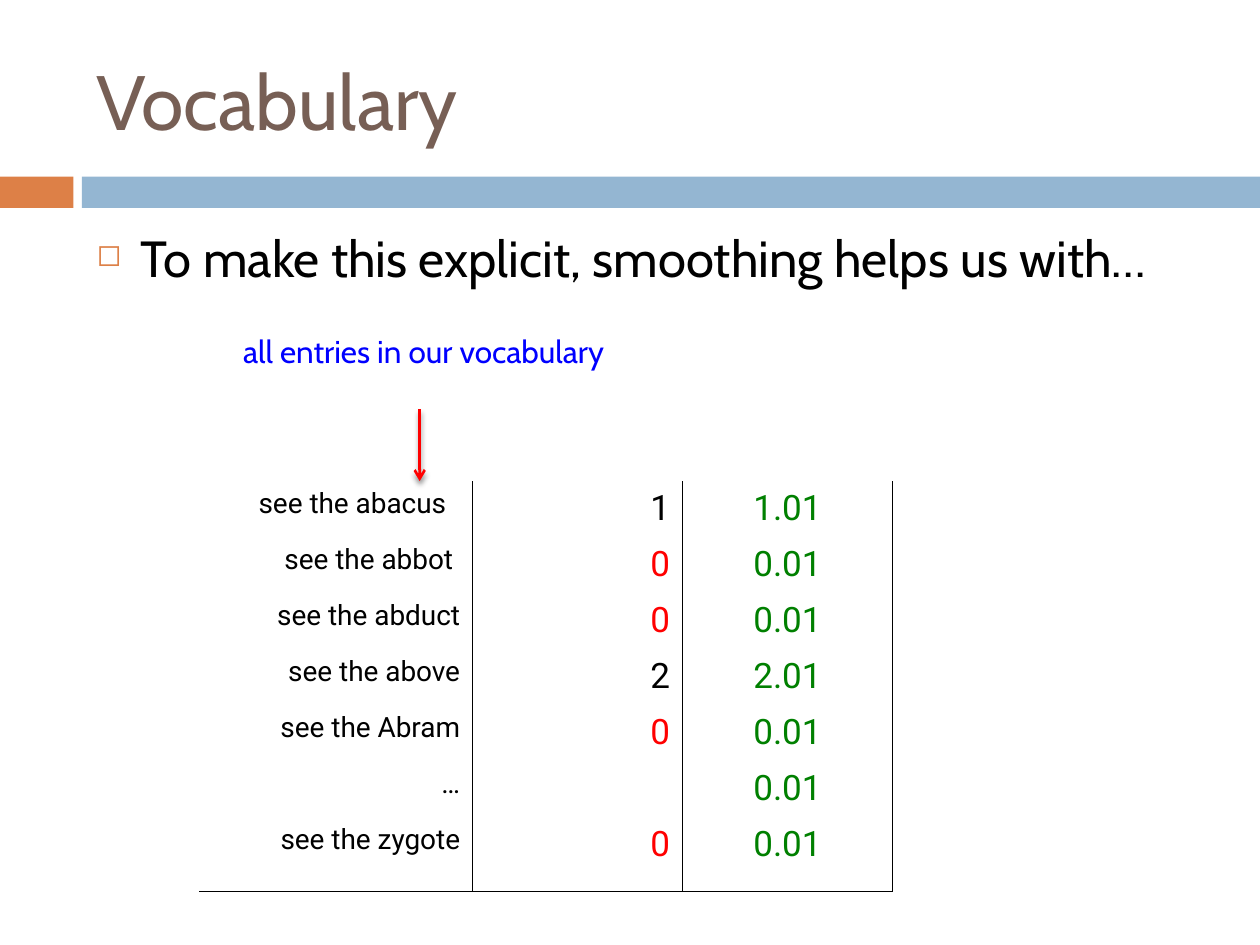
from lxml.etree import SubElement as Sub
from pptx import Presentation
from pptx.dml.color import RGBColor as Rgb
from pptx.enum.shapes import MSO_CONNECTOR as Conn, MSO_SHAPE as Kind
from pptx.enum.text import MSO_ANCHOR as Anchor, MSO_AUTO_SIZE as Auto, PP_ALIGN as Align
from pptx.oxml import parse_xml
from pptx.oxml.ns import nsdecls, qn
from pptx.util import Cm, Pt

HUES = {
    "brown": "775F55", "orange": "DD8047", "sky": "94B6D2", "black": "000000",
    "red": "FF0000", "green": "008000", "blue": "0000FF",
}
ROWS = [
    ("see the abacus  ", "1", "1.01"),
    ("see the abbot ", "0", "0.01"),
    ("see the abduct", "0", "0.01"),
    ("see the above", "2", "2.01"),
    ("see the Abram", "0", "0.01"),
    ("…", "", "0.01"),
    ("see the zygote", "0", "0.01"),
]


def rgb(hue):
    return Rgb.from_string(HUES[hue])


def write(para, text, hue, **form):
    run = para.add_run()
    run.text = text
    run.font.color.rgb = rgb(hue)
    for key, val in form.items():
        setattr(run.font, key, val)


def add_text(slide, box, text, hue, size, **form):
    frame = slide.shapes.add_textbox(*map(Cm, box)).text_frame
    frame.word_wrap = True
    for key, val in form.items():
        setattr(frame, key, val)
    para = frame.paragraphs[0]
    write(para, text, hue, size=Pt(size), name="Cabin")
    return para


def add_band(slide, box):
    left, top, width, height = box
    tab, gap = 1.48, 0.17
    start = tab + gap
    for x, w, hue in ((0, tab, "orange"), (start, width - start, "sky")):
        bar = slide.shapes.add_shape(Kind.RECTANGLE, Cm(left + x), Cm(top), Cm(w), Cm(height))
        bar.shadow.inherit = False
        bar.fill.solid()
        bar.fill.fore_color.rgb = rgb(hue)
        bar.line.fill.background()


def add_point(slide, box, text):
    para = add_text(slide, box, text, "black", 29)
    para.space_before = Pt(7)
    props = para._p.get_or_add_pPr()
    props.set("marL", str(Cm(0.89)))
    props.set("indent", str(Cm(-0.89)))
    tint = Sub(props, qn("a:buClr"))
    Sub(tint, qn("a:srgbClr"), val=HUES["orange"])
    Sub(props, qn("a:buSzPct"), val="60000")
    Sub(props, qn("a:buChar"), char="◻")


def add_note(slide, box, text):
    left, top, width, height = box
    add_text(slide, (left, top, width, 1.02), text, "blue", 18, auto_size=Auto.SHAPE_TO_FIT_TEXT)
    x = Cm(left + 3.81)
    arrow = slide.shapes.add_connector(Conn.STRAIGHT, x, Cm(top + 1.69), x, Cm(top + height))
    arrow.line.color.rgb = rgb("red")
    arrow.line.width = Pt(1.5)
    Sub(arrow.line._get_or_add_ln(), qn("a:tailEnd"), type="arrow")
    arrow._element.spPr.append(parse_xml(
        f'<a:effectLst {nsdecls("a")}><a:outerShdw blurRad="{Pt(3)}" dist="{Pt(2.4)}" '
        f'dir="5400000" rotWithShape="0"><a:srgbClr val="{HUES["black"]}">'
        '<a:alpha val="45000"/></a:srgbClr></a:outerShdw></a:effectLst>'))


def edge(cell, sides):
    props = cell._tc.get_or_add_tcPr()
    for side in "LRTB":
        line = Sub(props, qn(f"a:ln{side}"), w=str(Pt(1)))
        if side in sides:
            fill = Sub(line, qn("a:solidFill"))
            Sub(fill, qn("a:srgbClr"), val=HUES["black"])
        else:
            Sub(line, qn("a:noFill"))
    cell.fill.background()


def add_counts(slide, box):
    left, top, width, height = box
    first, step = 5.51, 1.13
    rest = (width - first) / 2
    last = len(ROWS) - 1
    grid = slide.shapes.add_table(len(ROWS), 3, *map(Cm, box)).table
    grid.first_row = grid.horz_banding = False
    for col, wide in zip(grid.columns, (first, rest, rest)):
        col.width = Cm(wide)
    for r, row in enumerate(ROWS):
        grid.rows[r].height = Cm(step if r < last else height - step * last)
        for c, text in enumerate(row):
            cell = grid.cell(r, c)
            edge(cell, ("L" if c else "") + "R" + ("B" if r == last else ""))
            para = cell.text_frame.paragraphs[0]
            para.alignment = Align.CENTER if c == 2 else Align.RIGHT
            if text:
                hue = "green" if c == 2 else "red" if text == "0" else "black"
                write(para, text, hue, size=Pt(20 if c else 16), name="Roboto")


def main():
    deck = Presentation()
    deck.slide_width, deck.slide_height = Cm(25.4), Cm(19.05)
    slide = deck.slides.add_slide(deck.slide_layouts[6])
    add_band(slide, (0, 3.56, 25.4, 0.63))
    add_text(slide, (1.7, 0.64, 22.66, 2.74), "Vocabulary", "brown", 44,
             vertical_anchor=Anchor.MIDDLE)
    add_point(slide, (1.7, 4.45, 22.66, 12.5), "To make this explicit, smoothing helps us with…")
    add_counts(slide, (4.02, 9.7, 13.97, 8.28))
    add_note(slide, (4.65, 6.56, 8.46, 3.14), "all entries in our vocabulary")
    deck.save("out.pptx")


if __name__ == "__main__":
    main()
